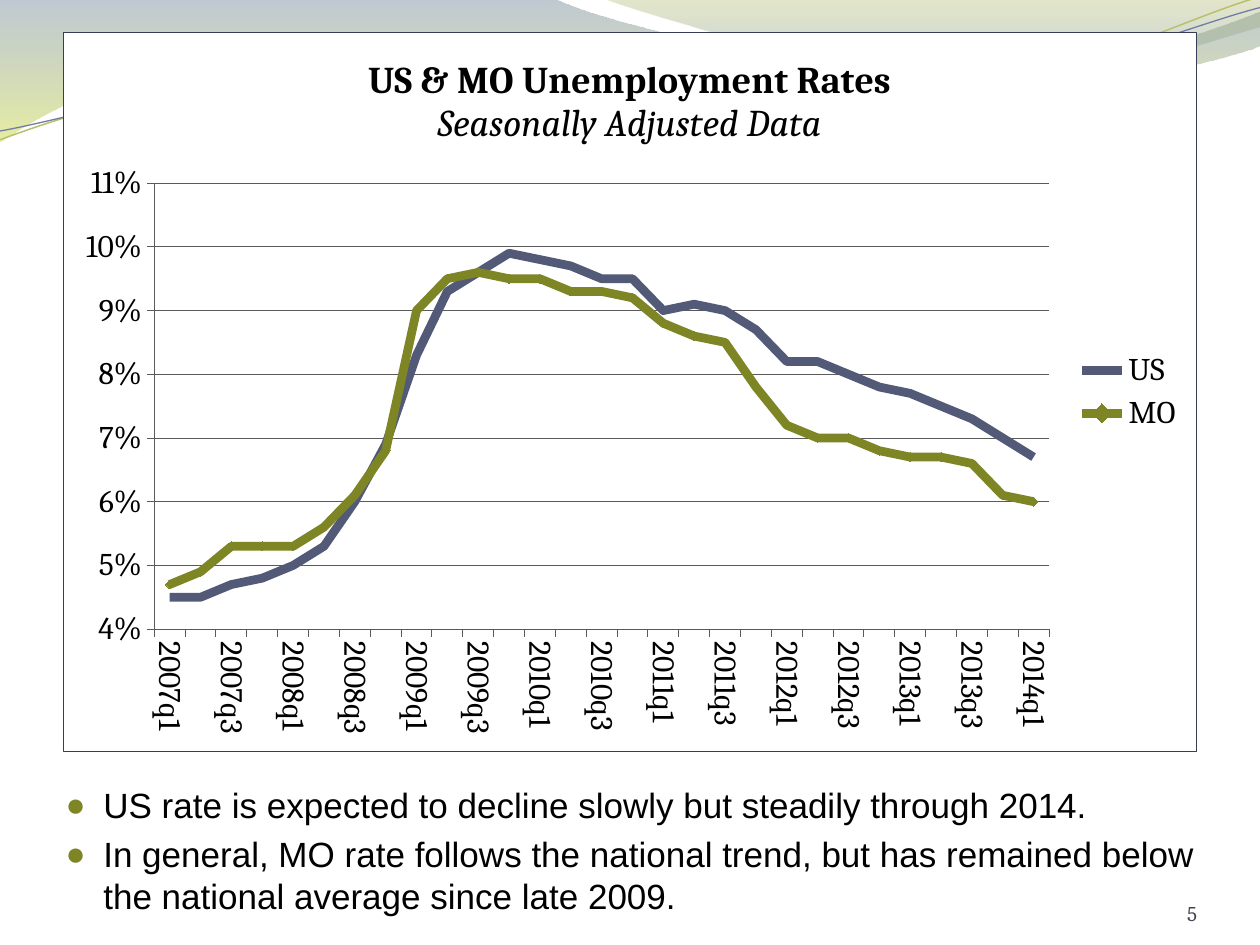
from dataclasses import dataclass
from math import cos, radians, sin
from typing import Optional

from lxml.etree import SubElement
from pptx import Presentation
from pptx.chart.data import CategoryChartData
from pptx.dml.color import RGBColor
from pptx.enum.chart import XL_CHART_TYPE, XL_LEGEND_POSITION, XL_MARKER_STYLE, XL_TICK_MARK
from pptx.enum.text import MSO_ANCHOR, MSO_AUTO_SIZE, PP_ALIGN
from pptx.oxml.ns import qn
from pptx.util import Inches, Pt

BLACK = RGBColor(0, 0, 0)
WHITE = RGBColor(0xFF, 0xFF, 0xFF)
GRID_GRAY = RGBColor(0x5A, 0x5A, 0x5A)
NUMBER_GRAY = RGBColor(0x43, 0x43, 0x4F)
BORDER_NAVY = RGBColor(0x37, 0x3D, 0x54)
US_BLUE = RGBColor(0x53, 0x5A, 0x78)
OLIVE = RGBColor(0x7D, 0x85, 0x25)
STEEL = RGBColor(0x72, 0x88, 0x9B)
LIME = RGBColor(0xD3, 0xDE, 0x57)
MOSS = RGBColor(0xA4, 0xAC, 0x50)
SKY = RGBColor(0x84, 0xA3, 0xBD)
PALE_OLIVE = RGBColor(0xB9, 0xC0, 0x6C)
PERIWINKLE = RGBColor(0x72, 0x7C, 0xA3)


@dataclass
class GradientStop:
    position: int
    color: RGBColor
    opacity: int


@dataclass
class Wave:
    box: tuple
    start: tuple
    segments: list
    stops: Optional[list] = None
    line_color: Optional[RGBColor] = None
    line_width: float = 0.75
    rotation: float = 0


@dataclass
class RateSeries:
    name: str
    tenths: list
    color: RGBColor
    marker: XL_MARKER_STYLE


WAVES = [
    Wave((-0.01, -0.01, 10.02, 1.14), (0, 0), [
        (4.4, -0.01), (4.76, 0.17, 6.64, 0.63, 7.58, 0.63), (8.53, 0.63, 9.58, 0.26, 10, 0.09),
        (10.01, 0.36), (9.83, 0.44, 8.7, 0.76, 7.46, 0.75), (6.22, 0.75, 3.82, 0.28, 2.57, 0.34),
        (1.29, 0.36, 0.46, 0.83, -0.01, 1.13), (0, 0),
    ], [GradientStop(0, STEEL, 45), GradientStop(100, LIME, 55)]),
    Wave((4.79, -0.01, 5.21, 0.7), (4.79, -0.01), [
        (5.09, 0.11, 6.82, 0.62, 7.69, 0.65), (8.56, 0.69, 9.61, 0.32, 10, 0.21), (10, 0),
        (4.79, -0.01),
    ], [GradientStop(0, MOSS, 30), GradientStop(80, SKY, 45)]),
    Wave((-0.02, 0.22, 10.02, 0.71), (0, 1.11), [
        (0.48, 0.93, 1.58, 0.57, 2.77, 0.52), (3.95, 0.47, 5.93, 0.89, 7.13, 0.8),
        (8.33, 0.71, 9.38, 0.15, 9.98, -0.02),
    ], line_color=PALE_OLIVE, line_width=0.85, rotation=357.3),
    Wave((-0.02, 0.3, 10.03, 0.58), (0, 1.04), [
        (0.47, 0.96, 1.64, 0.61, 2.83, 0.56), (4.03, 0.51, 5.97, 0.84, 7.17, 0.75),
        (8.36, 0.67, 9.41, 0.21, 10, 0.06),
    ], line_color=PERIWINKLE, rotation=357.3),
]

QUARTERS = [f"{2007 + index // 4}q{index % 4 + 1}" for index in range(29)]
RATES = [
    RateSeries("US ", [45, 45, 47, 48, 50, 53, 60, 69, 83, 93, 96, 99, 98, 97, 95, 95, 90, 91, 90,
                       87, 82, 82, 80, 78, 77, 75, 73, 70, 67], US_BLUE, XL_MARKER_STYLE.NONE),
    RateSeries("MO", [47, 49, 53, 53, 53, 56, 61, 68, 90, 95, 96, 95, 95, 93, 93, 92, 88, 86, 85,
                      78, 72, 70, 70, 68, 67, 67, 66, 61, 60], OLIVE, XL_MARKER_STYLE.DIAMOND),
]
BULLETS = [
    "US rate is expected to decline slowly but steadily through 2014.",
    "In general, MO rate follows the national trend, but has remained below "
    "the national average since late 2009.",
]


def style_font(font, size: float, name: str, color: RGBColor) -> None:
    font.size = Pt(size)
    font.name = name
    font.color.rgb = color


def unrotate(wave: Wave, x: float, y: float) -> tuple:
    left, top, width, height = wave.box
    angle = radians(-wave.rotation)
    across, down = x - left - width / 2, y - top - height / 2
    return (Inches(width / 2 + across * cos(angle) - down * sin(angle)),
            Inches(height / 2 + across * sin(angle) + down * cos(angle)))


def bend_outline(shape, wave: Wave) -> None:
    outline = next(shape._element.iter(qn("a:path")))
    outline.set("w", str(shape.width))
    outline.set("h", str(shape.height))
    for command in list(outline):
        outline.remove(command)
    for index, segment in enumerate([wave.start] + wave.segments):
        tag = "a:moveTo" if index == 0 else "a:lnTo" if len(segment) == 2 else "a:cubicBezTo"
        command = SubElement(outline, qn(tag))
        for x, y in zip(segment[::2], segment[1::2]):
            local_x, local_y = unrotate(wave, x, y)
            SubElement(command, qn("a:pt"), x=str(local_x), y=str(local_y))
    if wave.stops:
        SubElement(outline, qn("a:close"))


def draw_wave(slide, wave: Wave) -> None:
    builder = slide.shapes.build_freeform(*map(Inches, wave.start))
    builder.add_line_segments([tuple(map(Inches, segment[-2:])) for segment in wave.segments], close=False)
    shape = builder.convert_to_shape()
    shape.left, shape.top, shape.width, shape.height = map(Inches, wave.box)
    shape.rotation = wave.rotation
    bend_outline(shape, wave)
    shape.shadow.inherit = False
    if wave.stops is None:
        shape.fill.background()
        shape.line.color.rgb = wave.line_color
        shape.line.width = Pt(wave.line_width)
        return
    shape.line.fill.background()
    shape.fill.gradient()
    shape.fill.gradient_angle = 270
    elements = shape._element.spPr.iter(qn("a:gs"))
    for stop, gradient_stop, element in zip(wave.stops, shape.fill.gradient_stops, elements):
        gradient_stop.color.rgb = stop.color
        element.set("pos", str(stop.position * 1000))
        SubElement(element[0], qn("a:alpha"), val=str(stop.opacity * 1000))


def add_number(slide) -> None:
    box = slide.shapes.add_textbox(Inches(8.67), Inches(6.95), Inches(0.83), Inches(0.4))
    frame = box.text_frame
    frame.word_wrap = True
    frame.vertical_anchor = MSO_ANCHOR.BOTTOM
    frame.margin_left = frame.margin_right = frame.margin_top = frame.margin_bottom = 0
    frame.text = "5"
    frame.paragraphs[0].alignment = PP_ALIGN.RIGHT
    style_font(frame.paragraphs[0].runs[0].font, 12, "Cambria", NUMBER_GRAY)


def format_title(chart) -> None:
    frame = chart.chart_title.text_frame
    frame.text = "US & MO Unemployment Rates\nSeasonally Adjusted Data"
    for paragraph, bold in zip(frame.paragraphs, (True, False)):
        font = paragraph.runs[0].font
        style_font(font, 21.6, "Cambria", BLACK)
        font.bold = bold
        font.italic = not bold


def format_axes(chart) -> None:
    value_axis, category_axis = chart.value_axis, chart.category_axis
    value_axis.minimum_scale = 0.04
    value_axis.maximum_scale = 0.11
    value_axis.major_unit = 0.01
    value_axis.tick_labels.number_format = "0%;[Red]\\(0%\\)"
    value_axis.tick_labels.number_format_is_linked = False
    value_axis.has_major_gridlines = True
    for line in (value_axis.format.line, category_axis.format.line, value_axis.major_gridlines.format.line):
        line.color.rgb = GRID_GRAY
        line.width = Pt(0.5)
    for axis in (value_axis, category_axis):
        axis.major_tick_mark = XL_TICK_MARK.OUTSIDE
        style_font(axis.tick_labels.font, 18, "Cambria", BLACK)
    element = category_axis._element
    element.find(qn("c:txPr")).find(qn("a:bodyPr")).set("rot", "5400000")
    no_multi_level = element.find(qn("c:noMultiLvlLbl"))
    for tag, skip in (("c:tickLblSkip", "2"), ("c:tickMarkSkip", "1")):
        no_multi_level.addprevious(SubElement(element, qn(tag), val=skip))


def fill_chart_area(chart) -> None:
    properties = SubElement(chart._chartSpace, qn("c:spPr"))
    SubElement(SubElement(properties, qn("a:solidFill")), qn("a:srgbClr"), val=str(WHITE))
    line = SubElement(properties, qn("a:ln"), w=str(Pt(0.75)))
    SubElement(SubElement(line, qn("a:solidFill")), qn("a:srgbClr"), val=str(BORDER_NAVY))
    chart._chartSpace.chart.addnext(properties)


def place_plot(chart) -> None:
    plot_area = chart._chartSpace.chart.plotArea
    layout = plot_area.find(qn("c:layout"))
    if layout is None:
        layout = SubElement(plot_area, qn("c:layout"))
        plot_area.insert(0, layout)
    manual = SubElement(layout, qn("c:manualLayout"))
    settings = {"layoutTarget": "inner", "xMode": "edge", "yMode": "edge",
                "x": "0.08", "y": "0.21", "w": "0.79", "h": "0.62"}
    for name, value in settings.items():
        SubElement(manual, qn(f"c:{name}"), val=value)


def add_rate_chart(slide) -> None:
    data = CategoryChartData(number_format="0.0%")
    data.categories = QUARTERS
    for rate in RATES:
        data.add_series(rate.name, [value / 1000 for value in rate.tenths])
    chart = slide.shapes.add_chart(XL_CHART_TYPE.LINE, Inches(0.5), Inches(0.25),
                                   Inches(9), Inches(5.72), data).chart
    style_font(chart.font, 18, "Cambria", BLACK)
    format_title(chart)
    format_axes(chart)
    place_plot(chart)
    fill_chart_area(chart)
    chart.has_legend = True
    chart.legend.position = XL_LEGEND_POSITION.RIGHT
    chart.legend.include_in_layout = False
    style_font(chart.legend.font, 18, "Cambria", BLACK)
    chart.plots[0].vary_by_categories = False
    for series, rate in zip(chart.plots[0].series, RATES):
        series.smooth = False
        series.format.line.color.rgb = rate.color
        series.format.line.width = Pt(5)
        series.marker.style = rate.marker
        if rate.marker != XL_MARKER_STYLE.NONE:
            series.marker.size = 5
            series.marker.format.fill.solid()
            series.marker.format.fill.fore_color.rgb = rate.color
            series.marker.format.line.color.rgb = rate.color


def fill_body(body) -> None:
    body.left, body.top, body.width, body.height = map(Inches, (0.42, 6.17, 9.33, 1))
    frame = body.text_frame
    frame.auto_size = MSO_AUTO_SIZE.NONE
    frame.text = "\n".join(BULLETS)
    for paragraph in frame.paragraphs:
        style_font(paragraph.runs[0].font, 20, "Arial", BLACK)
        properties = paragraph._p.get_or_add_pPr()
        properties.set("marL", str(Inches(0.3)))
        properties.set("indent", str(Inches(-0.3)))
        SubElement(SubElement(properties, qn("a:buClr")), qn("a:srgbClr"), val=str(OLIVE))
        SubElement(properties, qn("a:buSzPct"), val="95000")
        SubElement(properties, qn("a:buChar"), char="●")


def main() -> None:
    presentation = Presentation()
    presentation.slide_width, presentation.slide_height = Inches(10), Inches(7.5)
    slide = presentation.slides.add_slide(presentation.slide_layouts[1])
    title = slide.shapes.title._element
    title.getparent().remove(title)
    for wave in WAVES:
        draw_wave(slide, wave)
    add_number(slide)
    add_rate_chart(slide)
    fill_body(slide.placeholders[1])
    presentation.save("out.pptx")


if __name__ == "__main__":
    main()
